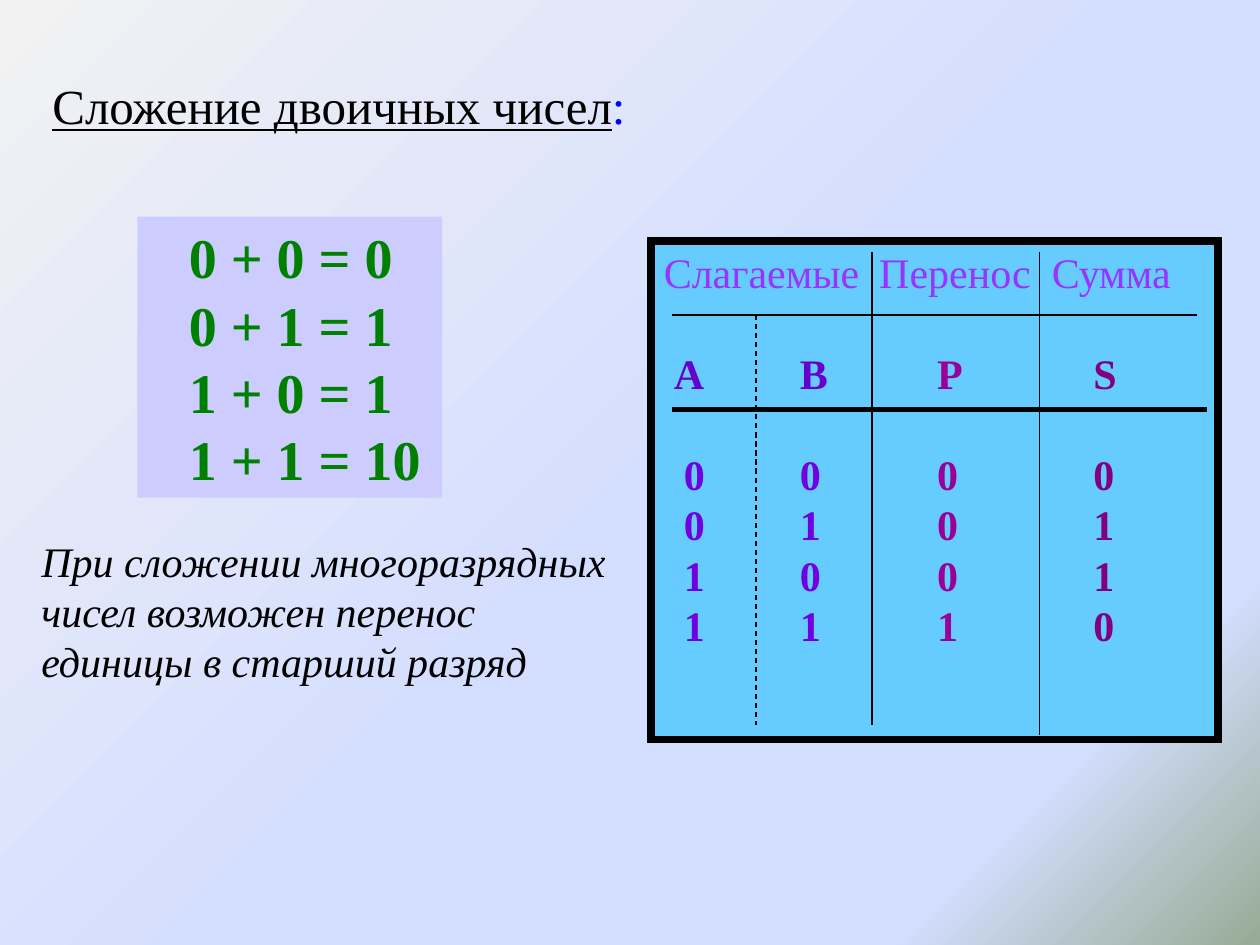
import pptx
import pptx.util
import pptx.dml.color
import pptx.enum.dml
import pptx.enum.shapes
import pptx.enum.text
import pptx.oxml
import pptx.oxml.ns

Inch, Pt = pptx.util.Inches, pptx.util.Pt
Align = pptx.enum.text.PP_ALIGN
qn = pptx.oxml.ns.qn
FONT, LEAD = "Times New Roman", 1.2

# Content
TITLE = [("Сложение двоичных чисел", "000000"), (":", "0000FF")]
NOTE = "При сложении многоразрядных чисел возможен перенос единицы в старший разряд"
SUMS = ["0 + 0 = 0", "0 + 1 = 1", "1 + 0 = 1", "1 + 1 = 10"]
STOPS = [(0, "F2F2F2"), (53, "D4DEFF"), (83, "D4DEFF"), (100, "96AB94")]
# Headings of the table: words, left
HEADS = [("Слагаемые", 5.27), ("Перенос", 6.98), ("Сумма", 8.35)]
# Columns: name, digits, left, digit indent, name colour, digit colour
COLS = [
    ("А", "0011", 5.35, 0.08, "6600CC", "7000E0"),
    ("В", "0101", 6.35, 0, "6600CC", "7000E0"),
    ("Р", "0001", 7.44, 0, "990099", "990099"),
    ("S", "0110", 8.68, 0, "800080", "800080"),
]

# Places in inches: left, top, width, height
BODY = (0.23, 0.55, 4.92, 5.25)
BOX = (1.09, 1.72, 2.42, 2.23)
PANEL = (5.17, 1.91, 4.5, 3.96)
INSET, ROW = 0.1, 24 * LEAD / 72
# Rules of the table: x1, y1, x2, y2, weight, dashed
RULES = [
    (6.92, 2, 6.92, 5.75, 0.75, False),
    (8.25, 2, 8.25, 5.83, 0.75, False),
    (6, 2.5, 6, 5.75, 0.75, True),
    (5.33, 2.5, 9.5, 2.5, 0.75, False),
    (5.33, 3.25, 9.58, 3.25, 3, False),
]


def tint(code):
    return pptx.dml.color.RGBColor.from_string(code)


def put(frame, runs, size=24, bold=False, ital=False, line=False,
        align=Align.LEFT, gap=0, first=0):
    """Add one paragraph of (text, colour) runs."""
    para = frame.paragraphs[0]
    if para.runs:
        para = frame.add_paragraph()
    para.alignment = align
    para.line_spacing, para.space_before = Pt(size * LEAD), Pt(gap)
    para._p.get_or_add_pPr().set("indent", str(Inch(first)))
    for words, ink in runs:
        run = para.add_run()
        run.text = words
        font = run.font
        font.name, font.size = FONT, Pt(size)
        font.bold, font.italic, font.underline = bold, ital, line
        font.color.rgb = tint(ink)
    return para


def setup(frame):
    frame.word_wrap = True
    frame.vertical_anchor = pptx.enum.text.MSO_ANCHOR.TOP
    return frame


def area(slide, left, top, width, height):
    box = slide.shapes.add_textbox(*map(Inch, (left, top, width, height)))
    return setup(box.text_frame)


def rect(slide, place, fill, edge=None):
    shape = slide.shapes.add_shape(
        pptx.enum.shapes.MSO_SHAPE.RECTANGLE, *map(Inch, place))
    shape.shadow.inherit = False
    shape.fill.solid()
    shape.fill.fore_color.rgb = tint(fill)
    if edge:
        shape.line.color.rgb, shape.line.width = tint(edge), Pt(4.5)
        line = shape._element.spPr.find(qn("a:ln"))
        line.append(line.makeelement(qn("a:miter"), {"lim": "800000"}))
    else:
        shape.line.fill.background()
    return setup(shape.text_frame)


def rule(slide, x1, y1, x2, y2, weight, dashed):
    line = slide.shapes.add_connector(
        pptx.enum.shapes.MSO_CONNECTOR.STRAIGHT, *map(Inch, (x1, y1, x2, y2)))
    line.line.color.rgb, line.line.width = tint("000000"), Pt(weight)
    if dashed:
        line.line.dash_style = pptx.enum.dml.MSO_LINE.DASH
    props = line._element.spPr
    props.append(props.makeelement(qn("a:effectLst"), {}))


def paint(slide):
    """Fill the background with the diagonal gradient."""
    fill = slide.background.fill
    fill.gradient()
    fill.gradient_angle = 315
    stops = next(slide.element.iter(qn("a:gsLst")))
    for old in list(stops):
        stops.remove(old)
    for share, code in STOPS:
        stop = stops.makeelement(qn("a:gs"), {"pos": str(share * 1000)})
        stop.append(stop.makeelement(qn("a:srgbClr"), {"val": code}))
        stops.append(stop)


def main():
    deck = pptx.Presentation()
    deck.slide_width, deck.slide_height = Inch(10), Inch(7.5)
    slide = deck.slides.add_slide(deck.slide_layouts[6])
    paint(slide)

    # Title and note
    body = area(slide, *BODY)
    title = put(body, TITLE, size=28, line=True, align=Align.CENTER)
    title.runs[-1].font.underline = False
    put(body, [(NOTE, "000000")], ital=True, gap=229)

    # Sums
    box = rect(slide, BOX, "CCCCFF")
    for words in SUMS:
        put(box, [(words, "008000")], size=32, bold=True, first=0.31)

    # Truth table: panel, headings, columns two rows below, rules
    rect(slide, PANEL, "66CCFF", edge="000000")
    top = PANEL[1]
    for words, left in HEADS:
        head = area(slide, left - INSET, top, 1.8, ROW + INSET)
        put(head, [(words, "9933FF")])
    for name, bits, left, first, ink, shade in COLS:
        col = area(slide, left - INSET, top + 2 * ROW, 0.6, 6 * ROW + INSET)
        put(col, [(name, ink)], bold=True)
        for i, bit in enumerate(bits):
            put(col, [(bit, shade)], bold=True, first=first,
                gap=0 if i else 24 * LEAD)
    for spec in RULES:
        rule(slide, *spec)

    deck.save("out.pptx")


if __name__ == "__main__":
    main()
